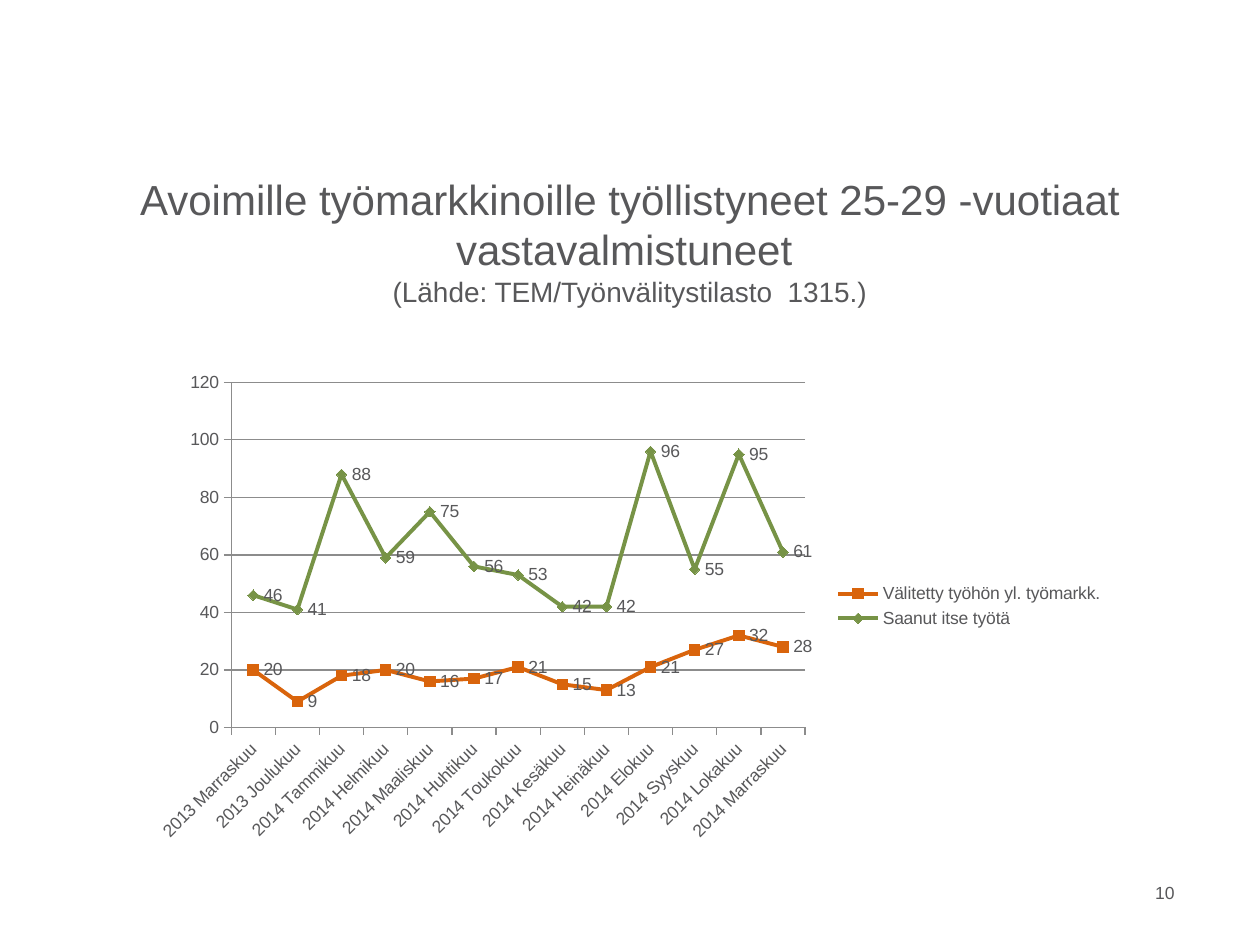
from lxml.etree import SubElement, QName
from pptx import Presentation
from pptx.chart.data import CategoryChartData
from pptx.dml.color import RGBColor
from pptx.enum.chart import (XL_CHART_TYPE, XL_LABEL_POSITION, XL_LEGEND_POSITION,
                             XL_MARKER_STYLE, XL_TICK_MARK)
from pptx.enum.text import MSO_ANCHOR, PP_ALIGN
from pptx.oxml.ns import qn
from pptx.util import Inches, Pt

FONT = "Arial"
COLORS = {"text": "58585A", "placed": "D9640C", "self_found": "779346", "axis": "8C8C8C"}
MONTHS = ["2013 Marraskuu", "2013 Joulukuu"] + [
    f"2014 {month}" for month in (
        "Tammikuu", "Helmikuu", "Maaliskuu", "Huhtikuu", "Toukokuu", "Kesäkuu",
        "Heinäkuu", "Elokuu", "Syyskuu", "Lokakuu", "Marraskuu")]
SERIES = [
    ("Välitetty työhön yl. työmarkk.", "placed", XL_MARKER_STYLE.SQUARE,
     [20, 9, 18, 20, 16, 17, 21, 15, 13, 21, 27, 32, 28]),
    ("Saanut itse työtä", "self_found", XL_MARKER_STYLE.DIAMOND,
     [46, 41, 88, 59, 75, 56, 53, 42, 42, 96, 55, 95, 61]),
]


def color(name):
    return RGBColor.from_string(COLORS[name])


def style_font(font, size):
    font.name = FONT
    font.size = Pt(size)
    font.color.rgb = color("text")


def add_text(page, area, lines, align, anchor=MSO_ANCHOR.TOP):
    """Add one paragraph whose lines are (text, size) pairs."""
    box = page.shapes.add_textbox(*map(Inches, area))
    frame = box.text_frame
    frame.word_wrap = True
    frame.vertical_anchor = anchor
    para = frame.paragraphs[0]
    para.alignment = align
    for index, (text, size) in enumerate(lines):
        if index:
            para.add_line_break()
        span = para.add_run()
        span.text = text
        style_font(span.font, size)


def place_plot(chart, **fractions):
    """Fix the inner plot area as fractions of the chart frame."""
    plot_area = chart.element.find(".//" + qn("c:plotArea"))
    layout = plot_area.find(qn("c:layout"))
    if layout is None:
        layout = SubElement(plot_area, qn("c:layout"))
        plot_area.insert(0, layout)
    manual = SubElement(layout, qn("c:manualLayout"))
    settings = {"layoutTarget": "inner", "xMode": "edge", "yMode": "edge", **fractions}
    for tag, value in settings.items():
        SubElement(manual, QName(qn("c:layout")).namespace and qn(f"c:{tag}")).set("val", str(value))


def style_axis(axis):
    axis.major_tick_mark = XL_TICK_MARK.OUTSIDE
    axis.minor_tick_mark = XL_TICK_MARK.NONE
    axis.format.line.color.rgb = color("axis")
    style_font(axis.tick_labels.font, 10)


def style_series(series, color_name, marker_style):
    series.smooth = False
    series.format.line.color.rgb = color(color_name)
    series.format.line.width = Pt(2.25)
    marker = series.marker
    marker.style = marker_style
    marker.size = 6
    marker.format.fill.solid()
    marker.format.fill.fore_color.rgb = color(color_name)
    marker.format.line.color.rgb = color(color_name)
    labels = series.data_labels
    labels.show_value = True
    labels.position = XL_LABEL_POSITION.RIGHT
    style_font(labels.font, 10)


def add_line_chart(page, area):
    data = CategoryChartData()
    data.categories = MONTHS
    for name, _, _, values in SERIES:
        data.add_series(name, values)
    chart = page.shapes.add_chart(
        XL_CHART_TYPE.LINE_MARKERS, *map(Inches, area), data).chart
    style_font(chart.font, 10)
    chart.has_title = False
    chart.has_legend = True
    chart.legend.position = XL_LEGEND_POSITION.RIGHT
    chart.legend.include_in_layout = False
    style_font(chart.legend.font, 10)
    chart.plots[0].vary_by_categories = False
    for series, (_, color_name, marker_style, _) in zip(chart.plots[0].series, SERIES):
        style_series(series, color_name, marker_style)

    months, counts = chart.category_axis, chart.value_axis
    for axis in (months, counts):
        style_axis(axis)
    months.has_major_gridlines = False
    months._element.find(".//" + qn("a:bodyPr")).set("rot", "-2700000")
    counts.minimum_scale, counts.maximum_scale, counts.major_unit = 0, 120, 20
    counts.has_major_gridlines = True
    counts.major_gridlines.format.line.color.rgb = color("axis")
    place_plot(chart, x=0.09, y=0.04, w=0.59, h=0.71)


def main():
    deck = Presentation()
    deck.slide_width, deck.slide_height = Inches(10), Inches(7.5)
    page = deck.slides.add_slide(deck.slide_layouts[6])
    add_text(page, (0.5, 1.56, 9, 0.7), [
        ("Avoimille työmarkkinoille työllistyneet 25-29 -vuotiaat vastavalmistuneet ", 24),
        ("(Lähde: TEM/Työnvälitystilasto  1315.)", 16),
    ], PP_ALIGN.CENTER, MSO_ANCHOR.MIDDLE)
    add_line_chart(page, (1.14, 2.88, 7.72, 3.86))
    add_text(page, (8.98, 6.95, 0.44, 0.4), [("10", 10)], PP_ALIGN.RIGHT)
    deck.save("out.pptx")


if __name__ == "__main__":
    main()
